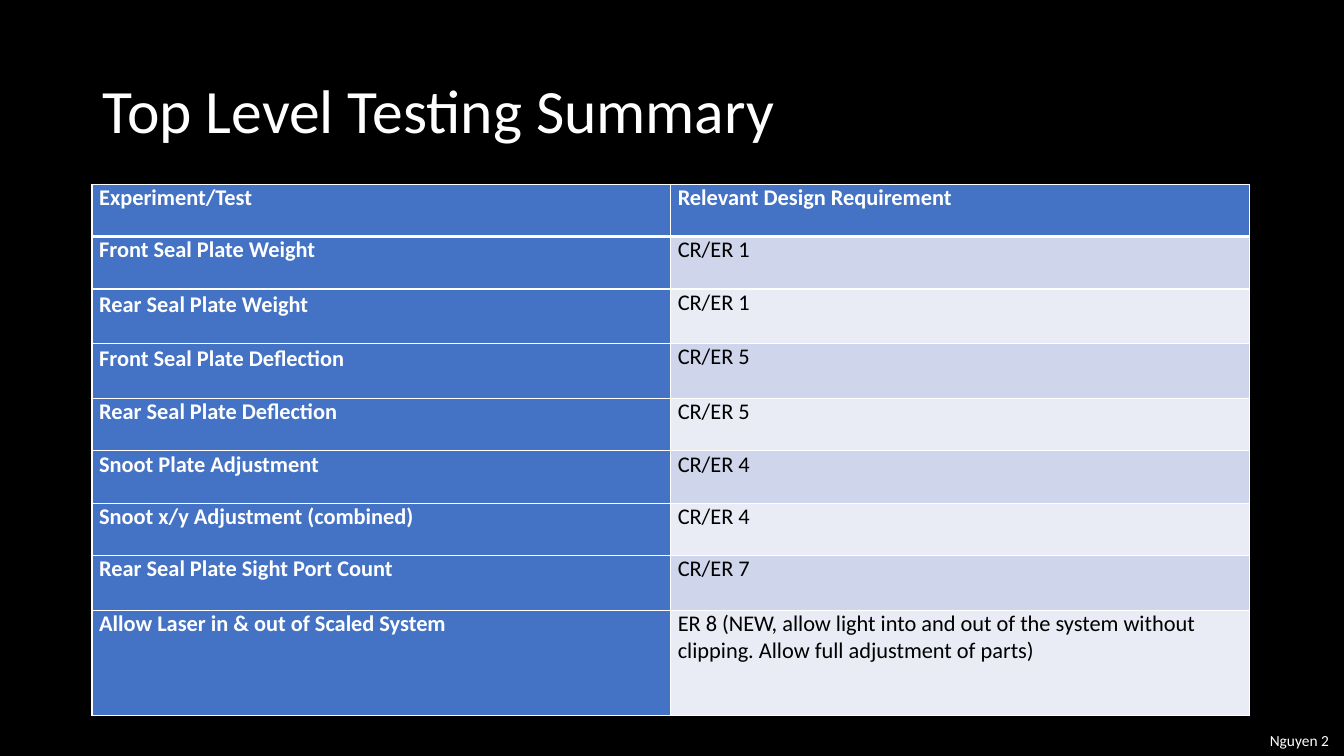
from lxml import etree
from pptx import Presentation
from pptx import util as u
from pptx.dml.color import RGBColor
from pptx.enum import text
from pptx.oxml import ns

BLACK = RGBColor(0x00, 0x00, 0x00)
WHITE = RGBColor(0xFF, 0xFF, 0xFF)
BLUE = RGBColor(0x44, 0x72, 0xC4)
BANDS = RGBColor(0xCF, 0xD5, 0xEA), RGBColor(0xE9, 0xEB, 0xF5)

LOW, MID, TALL = 1.32, 1.38, 2.65
HEAD = "Experiment/Test", "Relevant Design Requirement"
# test, requirement, row height in cm, line spacing of the test name
TESTS = [
    ("Front Seal Plate Weight", "CR/ER 1", LOW, 1.0),
    ("Rear Seal Plate Weight", "CR/ER 1", MID, 1.07),
    ("Front Seal Plate Deflection", "CR/ER 5", MID, 1.07),
    ("Rear Seal Plate Deflection", "CR/ER 5", LOW, 1.0),
    ("Snoot Plate Adjustment", "CR/ER 4", LOW, 1.0),
    ("Snoot x/y Adjustment (combined)", "CR/ER 4", LOW, 1.0),
    ("Rear Seal Plate Sight Port Count", "CR/ER 7", MID, 1.0),
    ("Allow Laser in & out of Scaled System",
     "ER 8 (NEW, allow light into and out of the system without clipping. "
     "Allow full adjustment of parts)", TALL, 1.0),
]


def apply(item, values):
    """Set each attribute named in values."""
    for name, value in values.items():
        setattr(item, name, value)


class Deck:
    """Holds the text style and the current slide."""

    font = "Calibri"

    def __init__(self, wide, high):
        self.prs = Presentation()
        apply(self.prs, {"slide_width": u.Cm(wide), "slide_height": u.Cm(high)})

    def start(self, color):
        self.slide = self.prs.slides.add_slide(self.prs.slide_layouts[5])
        fill = self.slide.background.fill
        fill.solid()
        fill.fore_color.rgb = color

    def put(self, frame, words, size, color, bold=False, space=1.0):
        """Fill a text frame with one styled paragraph and return it."""
        frame.text = words
        par = frame.paragraphs[0]
        apply(par, {"alignment": text.PP_ALIGN.LEFT, "line_spacing": space})
        font = par.runs[0].font
        apply(font, {"name": self.font, "size": u.Pt(size), "bold": bold})
        font.color.rgb = color
        return par

    def title(self, words, left, top, width, height):
        shape = self.slide.shapes.title
        apply(shape, {"left": u.Cm(left), "top": u.Cm(top),
                      "width": u.Cm(width), "height": u.Cm(height)})
        apply(shape.text_frame, {"auto_size": text.MSO_AUTO_SIZE.NONE,
                                 "vertical_anchor": text.MSO_ANCHOR.MIDDLE})
        self.put(shape.text_frame, words, 44, WHITE, space=0.9)

    def label(self, words, left, top, width, height):
        box = self.slide.shapes.add_textbox(*map(u.Cm, (left, top, width, height)))
        apply(box.text_frame, {"word_wrap": True,
                               "auto_size": text.MSO_AUTO_SIZE.SHAPE_TO_FIT_TEXT})
        self.put(box.text_frame, words, 11, WHITE)

    def edge(self, cell, side, points):
        props = cell._tc.get_or_add_tcPr()
        line = etree.SubElement(props, ns.qn("a:ln" + side), w=str(u.Pt(points)))
        fill = etree.SubElement(line, ns.qn("a:solidFill"))
        etree.SubElement(fill, ns.qn("a:srgbClr"), val=str(WHITE))

    def cell(self, cell, words, fill, color, bold, space, edges):
        for side, points in edges.items():
            self.edge(cell, side, points)
        cell.fill.solid()
        cell.fill.fore_color.rgb = fill
        apply(cell, {"margin_left": u.Cm(0.18), "margin_right": u.Cm(0.18),
                     "margin_top": 0, "margin_bottom": 0})
        return self.put(cell.text_frame, words, 16, color, bold, space)

    def table(self, head, tests, left, top, width):
        rows = [(*head, LOW, 1.0), *tests]
        high = sum(row[2] for row in rows)
        grid = self.slide.shapes.add_table(
            len(rows), 2, *map(u.Cm, (left, top, width, high))).table
        for r, (name, need, tall, space) in enumerate(rows):
            grid.rows[r].height = u.Cm(tall)
            edges = {"L": 1, "R": 1, "T": 3 if r == 1 else 1, "B": 1 if r else 3}
            par = self.cell(grid.cell(r, 0), name, BLUE, WHITE, True, space, edges)
            if r:
                props = par._p.get_or_add_pPr()
                props.set("marL", str(u.Cm(0.97)))
                props.set("indent", str(-u.Cm(0.97)))
            look = (BANDS[(r - 1) % 2], BLACK, False) if r else (BLUE, WHITE, True)
            self.cell(grid.cell(r, 1), need, *look, 1.0, edges)


def main():
    deck = Deck(33.87, 19.05)
    deck.start(BLACK)
    deck.title("Top Level Testing Summary", 2.33, 1.01, 29.21, 3.68)
    deck.table(HEAD, TESTS, 2.32, 4.64, 29.16)
    deck.label("Nguyen 2", 31.75, 18.31, 3.33, 0.74)
    deck.prs.save("out.pptx")


if __name__ == "__main__":
    main()
